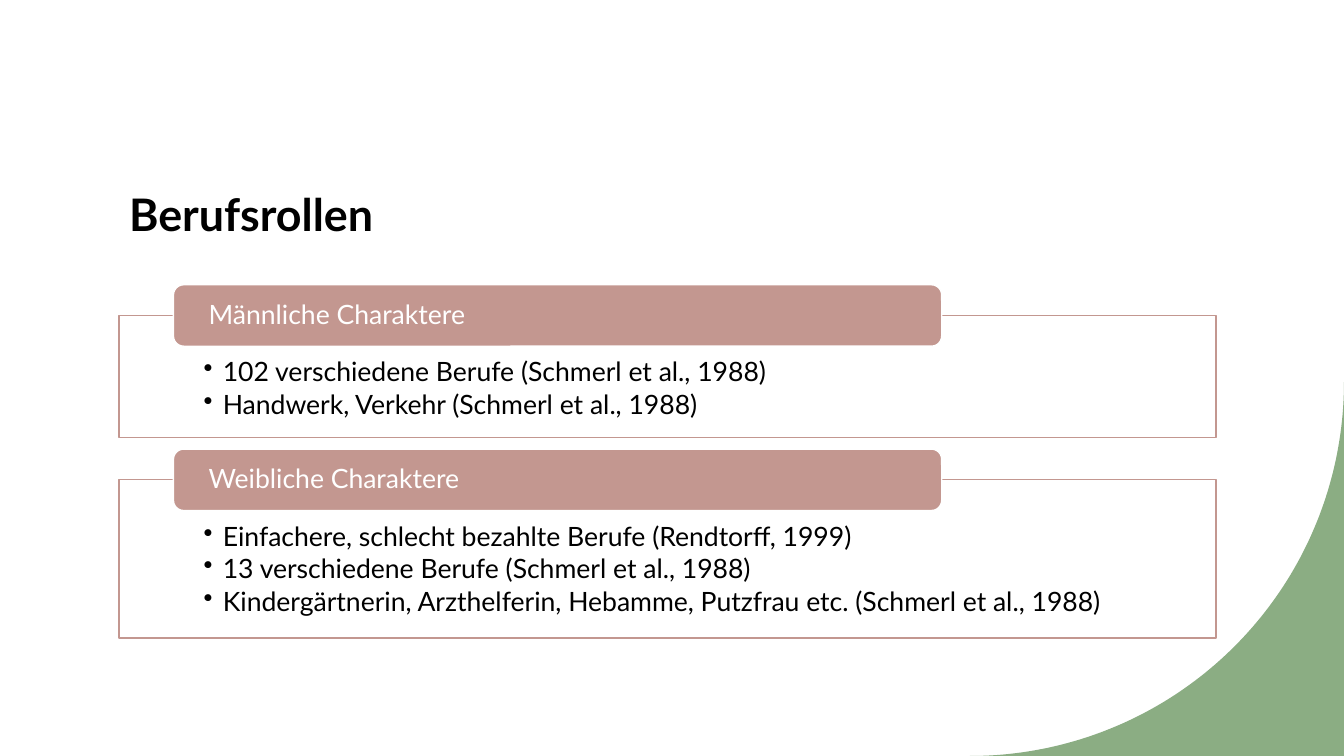
"""Build the slide on professional roles of male and female characters."""
from dataclasses import dataclass
from math import cos, pi, sin

from lxml import etree
from pptx import Presentation
from pptx.dml.color import RGBColor
from pptx.enum.shapes import MSO_SHAPE
from pptx.enum.text import MSO_ANCHOR, MSO_AUTO_SIZE, PP_ALIGN
from pptx.oxml.ns import qn
from pptx.util import Inches, Pt

RECTANGLE, ROUNDED = MSO_SHAPE.RECTANGLE, MSO_SHAPE.ROUNDED_RECTANGLE
TOP, MIDDLE, BOTTOM = MSO_ANCHOR.TOP, MSO_ANCHOR.MIDDLE, MSO_ANCHOR.BOTTOM
LEFT = PP_ALIGN.LEFT
NO_FIT = MSO_AUTO_SIZE.NONE

FONT = "Lato"
BLACK, WHITE, ROSE, GREEN = "000000", "FFFFFF", "C39790", "8BAD83"
SLIDE_WIDTH, SLIDE_HEIGHT = 13.33, 7.5
MARGIN, CONTENT_WIDTH = 1.18, 10.88
HEADER_LEFT, HEADER_WIDTH, HEADER_HEIGHT = 1.72, 7.62, 0.61
CORNER_RADIUS, ARC_STEPS = 3.71, 90
BULLET_INDENT = 0.19


@dataclass(frozen=True)
class Group:
    """A headed box with bullet points."""

    heading: str
    top: float
    height: float
    points: tuple[str, ...]


GROUPS = (
    Group("Männliche Charaktere", 3.13, 1.21, (
        "102 verschiedene Berufe (Schmerl et al., 1988)",
        "Handwerk, Verkehr (Schmerl et al., 1988)",
    )),
    Group("Weibliche Charaktere", 4.76, 1.57, (
        "Einfachere, schlecht bezahlte Berufe (Rendtorff, 1999)",
        "13 verschiedene Berufe (Schmerl et al., 1988)",
        "Kindergärtnerin, Arzthelferin, Hebamme, Putzfrau etc. (Schmerl et al., 1988)",
    )),
)


def apply(target, values: dict) -> None:
    """Set every attribute named in the values."""
    for name, value in values.items():
        setattr(target, name, value)


def color(hex_code: str) -> RGBColor:
    """Turn a hex string into a colour."""
    return RGBColor.from_string(hex_code)


def write(shape, lines: tuple[str, ...], size: float, hex_code: str,
          frame_format: dict, para_format: dict, bold: bool = False) -> None:
    """Write one formatted paragraph per line."""
    frame = shape.text_frame
    apply(frame, {"word_wrap": True, "auto_size": NO_FIT, **frame_format})
    frame.text = "\n".join(lines)
    for para in frame.paragraphs:
        apply(para, {"alignment": LEFT, **para_format})
        for span in para.runs:
            apply(span.font, {"name": FONT, "size": Pt(size), "bold": bold})
            span.font.color.rgb = color(hex_code)


def add_box(slide, kind, bounds: tuple[float, ...], fill: str, line: str):
    """Add a filled and outlined shape."""
    box = slide.shapes.add_shape(kind, *map(Inches, bounds))
    box.shadow.inherit = False
    box.fill.solid()
    box.fill.fore_color.rgb = color(fill)
    box.line.color.rgb = color(line)
    box.line.width = Pt(1)
    return box


def add_bullets(shape) -> None:
    """Give each paragraph a hanging bullet."""
    for para in shape.text_frame.paragraphs:
        properties = para._p.get_or_add_pPr()
        properties.set("marL", str(Inches(BULLET_INDENT)))
        properties.set("indent", str(-Inches(BULLET_INDENT)))
        etree.SubElement(properties, qn("a:buChar")).set("char", "•")


def add_corner(slide) -> None:
    """Draw the green corner outside a quarter circle."""
    center_x, center_y = SLIDE_WIDTH - CORNER_RADIUS, SLIDE_HEIGHT - CORNER_RADIUS
    angles = [step * pi / 2 / ARC_STEPS for step in range(ARC_STEPS + 1)]
    arc = [(Inches(center_x + CORNER_RADIUS * cos(angle)),
            Inches(center_y + CORNER_RADIUS * sin(angle))) for angle in angles]
    builder = slide.shapes.build_freeform(Inches(SLIDE_WIDTH), Inches(SLIDE_HEIGHT))
    builder.add_line_segments(arc)
    corner = builder.convert_to_shape()
    corner.shadow.inherit = False
    corner.fill.solid()
    corner.fill.fore_color.rgb = color(GREEN)
    corner.line.fill.background()


def add_title(slide, text: str) -> None:
    """Place and format the title."""
    title = slide.shapes.title
    apply(title, {"left": Inches(MARGIN), "top": Inches(0.79),
                  "width": Inches(CONTENT_WIDTH), "height": Inches(1.65)})
    write(title, (text,), 32, BLACK, {"vertical_anchor": BOTTOM},
          {"line_spacing": 1.1}, bold=True)


def add_group(slide, group: Group) -> None:
    """Draw a bullet box with its heading on the top edge."""
    box = add_box(slide, RECTANGLE, (MARGIN, group.top, CONTENT_WIDTH, group.height),
                  WHITE, ROSE)
    fill_color = box.fill._xPr.find(qn("a:solidFill"))[0]
    etree.SubElement(fill_color, qn("a:alpha")).set("val", "90000")
    write(box, group.points, 19, BLACK,
          {"vertical_anchor": TOP, "margin_left": Inches(0.84),
           "margin_right": Inches(0.84), "margin_top": Inches(0.43),
           "margin_bottom": Inches(0.15)},
          {"line_spacing": 0.9, "space_after": Pt(2.85)})
    add_bullets(box)
    header = add_box(slide, ROUNDED, (HEADER_LEFT, group.top - HEADER_HEIGHT / 2,
                                      HEADER_WIDTH, HEADER_HEIGHT), ROSE, WHITE)
    write(header, (group.heading,), 19, WHITE,
          {"vertical_anchor": MIDDLE, "margin_left": Inches(0.32),
           "margin_right": Inches(0.32), "margin_top": 0, "margin_bottom": 0},
          {"line_spacing": 0.9})


def main() -> None:
    """Build and save the deck."""
    deck = Presentation()
    apply(deck, {"slide_width": Inches(SLIDE_WIDTH),
                 "slide_height": Inches(SLIDE_HEIGHT)})
    page = deck.slides.add_slide(deck.slide_layouts[5])
    add_corner(page)
    add_title(page, "Berufsrollen")
    for group in GROUPS:
        add_group(page, group)
    deck.save("out.pptx")


if __name__ == "__main__":
    main()
